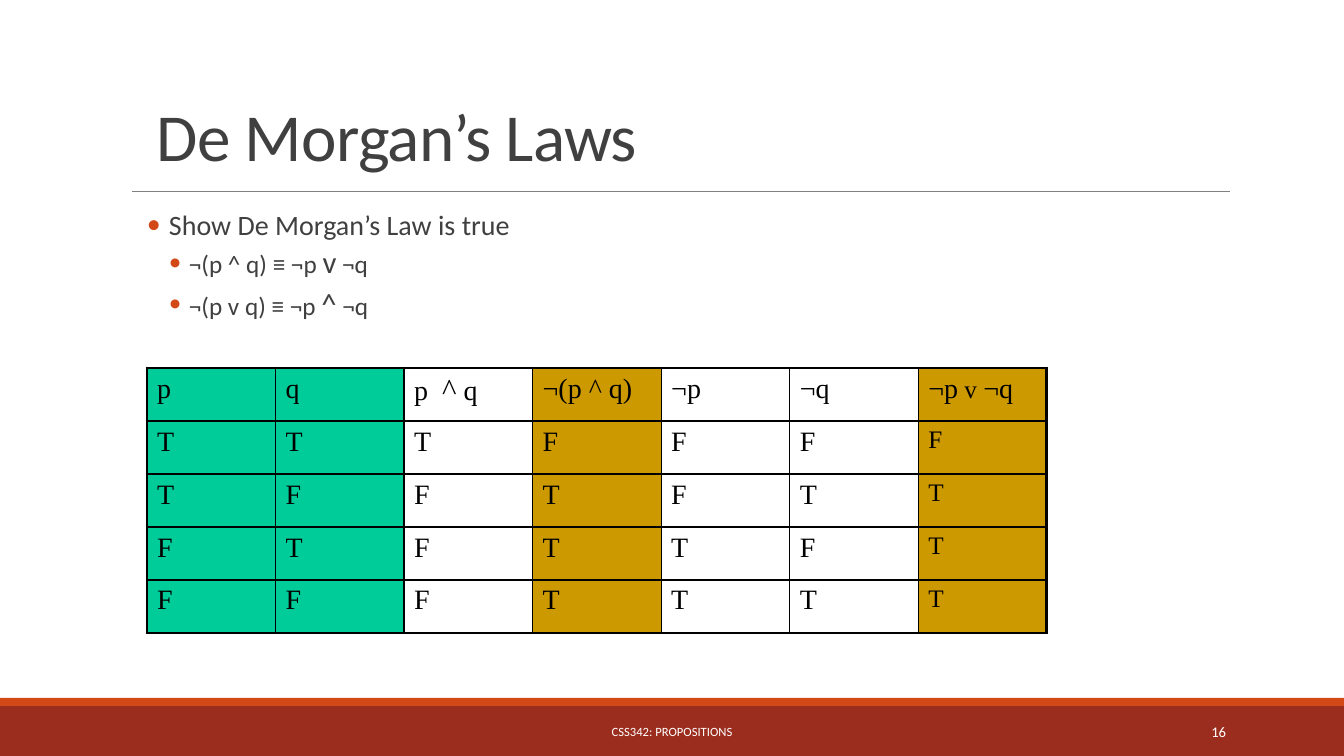
from lxml import etree
from pptx import Presentation
from pptx import util as u
from pptx.dml.color import RGBColor
from pptx.enum import shapes, text
from pptx.oxml.ns import qn

WHITE = RGBColor(0xFF, 0xFF, 0xFF)
BLACK = RGBColor(0x00, 0x00, 0x00)
DARK = RGBColor(0x40, 0x40, 0x40)
GRAY = RGBColor(0x80, 0x80, 0x80)
ORANGE = RGBColor(0xD3, 0x48, 0x17)
BRICK = RGBColor(0x9B, 0x2D, 0x1F)
GREEN = RGBColor(0x00, 0xCC, 0x99)
GOLD = RGBColor(0xCC, 0x99, 0x00)

# Content: a run is (text, size) or (text, size, letter spacing in points)
TITLE = [("De Morgan’s Laws", 48, -0.5)]
FOOTER = [("CSS342: PROPOSITIONS", 9)]
PAGE_NUMBER = [("16", 10.5)]
# Bullets: runs, left margin px, hanging px, space before pt, space after pt
BULLETS = [
    ([("Show De Morgan’s Law is true", 20)], 22, 22, 12, 2),
    ([("¬(p ^ q) ≡ ¬p ", 18), ("v", 22), (" ¬q", 18)], 42, 20, 2, 4),
    ([("¬(p v q) ≡ ¬p ", 18), ("^", 22), (" ¬q", 18)], 42, 20, 2, 4),
]
# Truth table columns: header runs, values, value size, fill
COLUMNS = [
    ([("p", 20)], "TTFF", 20, GREEN),
    ([("q", 20)], "TFTF", 20, GREEN),
    ([("p ", 20, 2.5), ("^", 22), (" q", 20)], "TFFF", 20, None),
    ([("¬(p ^ q)", 20)], "FTTT", 20, GOLD),
    ([("¬p", 20)], "FFTT", 20, None),
    ([("¬q", 20)], "FTFT", 20, None),
    ([("¬p", 20), (" v ", 18), ("¬q", 20)], "FTTT", 18, GOLD),
]
ROW_COUNT = 5

# Layout in px
SLIDE_WIDTH, SLIDE_HEIGHT = 1344, 756
EMU_PER_PX = 914400 / 100.8
TABLE_LEFT, TABLE_TOP, TABLE_WIDTH, ROW_HEIGHT = 147, 368, 900, 53
INNER_BORDER, OUTER_BORDER = 1, 2.25


def px(length):
    return u.Emu(round(length * EMU_PER_PX))


def set_all(target, values):
    for name, value in values.items():
        setattr(target, name, value)


def add_runs(paragraph, runs, font_name, color):
    for words, size, *spacing in runs:
        run = paragraph.add_run()
        run.text = words
        set_all(run.font, {"name": font_name, "size": u.Pt(size)})
        run.font.color.rgb = color
        for points in spacing:
            run.font._element.set("spc", str(round(points * 100)))


def add_text_box(box, anchor, **margins):
    frame = slide.shapes.add_textbox(*map(px, box)).text_frame
    set_all(frame, {"word_wrap": True, "vertical_anchor": anchor, **margins})
    return frame


def add_bullet(paragraph, margin, hanging):
    properties = paragraph._p.get_or_add_pPr()
    properties.set("marL", str(px(margin)))
    properties.set("indent", str(-px(hanging)))
    color = etree.SubElement(properties, qn("a:buClr"))
    etree.SubElement(color, qn("a:srgbClr"), val=str(ORANGE))
    etree.SubElement(properties, qn("a:buFont"), typeface="Calibri")
    etree.SubElement(properties, qn("a:buChar"), char="•")


def set_borders(cell, widths):
    properties = cell._tc.get_or_add_tcPr()
    for index, (side, width) in enumerate(widths.items()):
        line = etree.Element(qn(f"a:ln{side}"), w=str(u.Pt(width)))
        fill = etree.SubElement(line, qn("a:solidFill"))
        etree.SubElement(fill, qn("a:srgbClr"), val=str(BLACK))
        properties.insert(index, line)


presentation = Presentation()
set_all(presentation, {"slide_width": px(SLIDE_WIDTH), "slide_height": px(SLIDE_HEIGHT)})
slide = presentation.slides.add_slide(presentation.slide_layouts[6])

# Footer bands
for top, height, color in [(706, 50, BRICK), (698, 8, ORANGE)]:
    band = slide.shapes.add_shape(
        shapes.MSO_SHAPE.RECTANGLE, *map(px, (0, top, SLIDE_WIDTH, height)))
    band.shadow.inherit = False
    band.fill.solid()
    band.fill.fore_color.rgb = color
    band.line.fill.background()

# Rule under the title
rule = slide.shapes.add_connector(
    shapes.MSO_CONNECTOR.STRAIGHT, *map(px, (132, 191, 1230, 191)))
rule.line.color.rgb = GRAY
rule.line.width = u.Pt(0.5)
etree.SubElement(rule._element.spPr, qn("a:effectLst"))

# Title, footer and page number
MIDDLE, BOTTOM = text.MSO_ANCHOR.MIDDLE, text.MSO_ANCHOR.BOTTOM
LEFT, CENTER, RIGHT = text.PP_ALIGN.LEFT, text.PP_ALIGN.CENTER, text.PP_ALIGN.RIGHT
for runs, box, anchor, alignment, spacing, color in [
    (TITLE, (147, 54, 857, 126), BOTTOM, LEFT, 0.85, DARK),
    (FOOTER, (406, 712, 532, 40), MIDDLE, CENTER, 1.0, WHITE),
    (PAGE_NUMBER, (1092, 712, 144, 40), MIDDLE, RIGHT, 1.0, WHITE),
]:
    paragraph = add_text_box(box, anchor).paragraphs[0]
    set_all(paragraph, {"alignment": alignment, "line_spacing": spacing})
    add_runs(paragraph, runs, "Calibri", color)

# Bullets
body = add_text_box((147, 206, 871, 137), text.MSO_ANCHOR.TOP, margin_left=0, margin_right=0)
for index, (runs, margin, hanging, before, after) in enumerate(BULLETS):
    paragraph = body.add_paragraph() if index else body.paragraphs[0]
    set_all(paragraph, {"level": min(index, 1), "line_spacing": 0.9,
                        "space_before": u.Pt(before), "space_after": u.Pt(after)})
    add_bullet(paragraph, margin, hanging)
    add_runs(paragraph, runs, "Calibri", DARK)

# Truth table
last_row, last_column = ROW_COUNT - 1, len(COLUMNS) - 1
table = slide.shapes.add_table(
    ROW_COUNT, len(COLUMNS),
    *map(px, (TABLE_LEFT, TABLE_TOP, TABLE_WIDTH, ROW_COUNT * ROW_HEIGHT))).table
set_all(table, {"first_row": False, "horz_banding": False})
for row in table.rows:
    row.height = px(ROW_HEIGHT)
for column, (header, values, size, fill) in enumerate(COLUMNS):
    table.columns[column].width = px(TABLE_WIDTH / len(COLUMNS))
    for row, runs in enumerate([header] + [[(value, size)] for value in values]):
        cell = table.cell(row, column)
        if fill is None:
            cell.fill.background()
        else:
            cell.fill.solid()
            cell.fill.fore_color.rgb = fill
        outer = {"L": column == 0, "R": column == last_column,
                 "T": row == 0, "B": row == last_row}
        set_borders(cell, {side: OUTER_BORDER if edge else INNER_BORDER
                           for side, edge in outer.items()})
        add_runs(cell.text_frame.paragraphs[0], runs, "Times New Roman", BLACK)

presentation.save("out.pptx")
